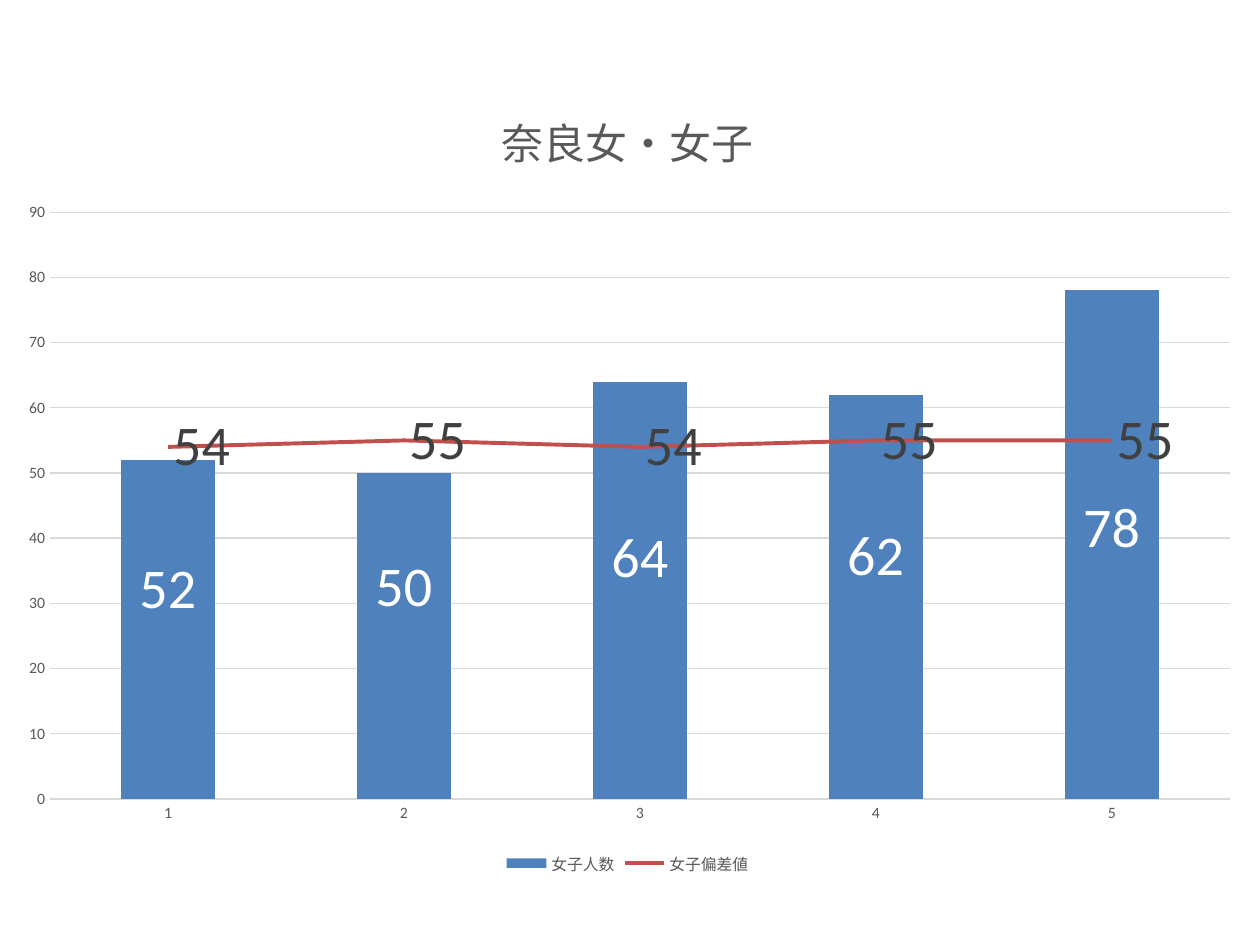
from lxml import etree
from pptx import Presentation
from pptx.chart.data import CategoryChartData
from pptx.dml.color import RGBColor
from pptx.enum.chart import (XL_CHART_TYPE, XL_LABEL_POSITION, XL_LEGEND_POSITION,
                             XL_MARKER_STYLE, XL_TICK_MARK)
from pptx.oxml import parse_xml
from pptx.oxml.ns import qn
from pptx.util import Inches, Pt

COLUMN = XL_CHART_TYPE.COLUMN_CLUSTERED
CENTER, RIGHT = XL_LABEL_POSITION.CENTER, XL_LABEL_POSITION.RIGHT
BOTTOM = XL_LEGEND_POSITION.BOTTOM
NO_MARKER, NO_TICK = XL_MARKER_STYLE.NONE, XL_TICK_MARK.NONE

FONT = "Calibri"
COLORS = {"count": "4F81BD", "score": "C0504D", "text": "595959", "grid": "D9D9D9",
          "count_label": "FFFFFF", "score_label": "404040", "base": "000000"}
COUNTS = (52, 50, 64, 62, 78)
SCORES = (54, 55, 54, 55, 55)
# Shift of each column label from the column's centre, as shares of the chart
LABEL_SHIFTS = ((0, -0.05), (0, -0.06), (0, -0.04), (0, -0.05), (0, -0.02))
CHART_NS = "http://schemas.openxmlformats.org/drawingml/2006/chart"


def rgb(name):
    return RGBColor.from_string(COLORS[name])


def set_font(font, size, color):
    for key, value in {"name": FONT, "size": Pt(size), "bold": False}.items():
        setattr(font, key, value)
    font.color.rgb = rgb(color)


def set_line(line, color, width):
    line.color.rgb = rgb(color)
    line.width = Pt(width)


def make_layout(**values):
    """Return a manual chart layout with the given children."""
    layout = etree.Element(qn("c:layout"))
    manual = etree.SubElement(layout, qn("c:manualLayout"))
    for tag, value in values.items():
        etree.SubElement(manual, qn("c:" + tag)).set("val", str(value))
    return layout


def move_to_line_plot(chart):
    """Move the second column series to a line plot on the same axes."""
    bar = chart.plots[0]._element
    ser = bar.findall(qn("c:ser"))[1]
    for invert in ser.findall(qn("c:invertIfNegative")):
        ser.remove(invert)
    line = parse_xml(f'<c:lineChart xmlns:c="{CHART_NS}"><c:grouping val="standard"/>'
                     '<c:varyColors val="0"/><c:marker val="1"/></c:lineChart>')
    line.insert(2, ser)
    for axis in bar.findall(qn("c:axId")):
        etree.SubElement(line, qn("c:axId")).set("val", axis.get("val"))
    bar.addnext(line)


def style_labels(labels, color, position):
    labels.show_value = True
    labels.position = position
    set_font(labels.font, 32, color)


def style_columns(plot):
    plot.gap_width = 150
    plot.vary_by_categories = False
    series = plot.series[0]
    series.format.fill.solid()
    series.format.fill.fore_color.rgb = rgb("count")
    style_labels(series.data_labels, "count_label", CENTER)
    for i, (x, y) in enumerate(LABEL_SHIFTS):
        label = series.points[i].data_label
        set_font(label.font, 32, "count_label")
        label.position = CENTER
        idx = series.data_labels._element.findall(qn("c:dLbl"))[i].find(qn("c:idx"))
        idx.addnext(make_layout(x=x, y=y))


def style_line(plot):
    series = plot.series[0]
    series.smooth = False
    series.marker.style = NO_MARKER
    set_line(series.format.line, "score", 2.25)
    style_labels(series.data_labels, "score_label", RIGHT)


def style_axes(chart):
    for axis in (chart.category_axis, chart.value_axis):
        axis.major_tick_mark = axis.minor_tick_mark = NO_TICK
        set_font(axis.tick_labels.font, 9, "text")
    set_line(chart.category_axis.format.line, "grid", 0.75)
    value_axis = chart.value_axis
    for key, value in {"minimum_scale": 0, "maximum_scale": 90, "major_unit": 10,
                       "has_major_gridlines": True}.items():
        setattr(value_axis, key, value)
    value_axis.format.line.fill.background()
    set_line(value_axis.major_gridlines.format.line, "grid", 0.75)


def add_title(chart, text):
    chart.has_title = True
    p = chart.chart_title.text_frame.paragraphs[0]
    r = p.add_run()
    r.text = text
    set_font(r.font, 24, "text")


def add_legend(chart):
    chart.has_legend = True
    chart.legend.position = BOTTOM
    chart.legend.include_in_layout = False
    set_font(chart.legend.font, 9, "text")


def place_plot_area(chart):
    area = chart._chartSpace.chart.plotArea
    for old in area.findall(qn("c:layout")):
        area.remove(old)
    area.insert(0, make_layout(layoutTarget="inner", xMode="edge", yMode="edge",
                               x=0.04, y=0.17, w=0.94, h=0.73))


def add_combined_chart(s):
    data = CategoryChartData()
    data.categories = [str(n) for n in range(1, len(COUNTS) + 1)]
    data.add_series("女子人数", COUNTS)
    data.add_series("女子偏差値", SCORES)
    chart = s.shapes.add_chart(COLUMN, Inches(0), Inches(0.6),
                               Inches(9.96), Inches(6.38), data).chart
    set_font(chart.font, 10, "base")
    move_to_line_plot(chart)
    style_columns(chart.plots[0])
    style_line(chart.plots[1])
    style_axes(chart)
    add_title(chart, "奈良女・女子")
    add_legend(chart)
    place_plot_area(chart)


def main():
    prs = Presentation()
    prs.slide_width, prs.slide_height = Inches(10), Inches(7.5)
    s = prs.slides.add_slide(prs.slide_layouts[6])
    add_combined_chart(s)
    prs.save("out.pptx")


if __name__ == "__main__":
    main()
